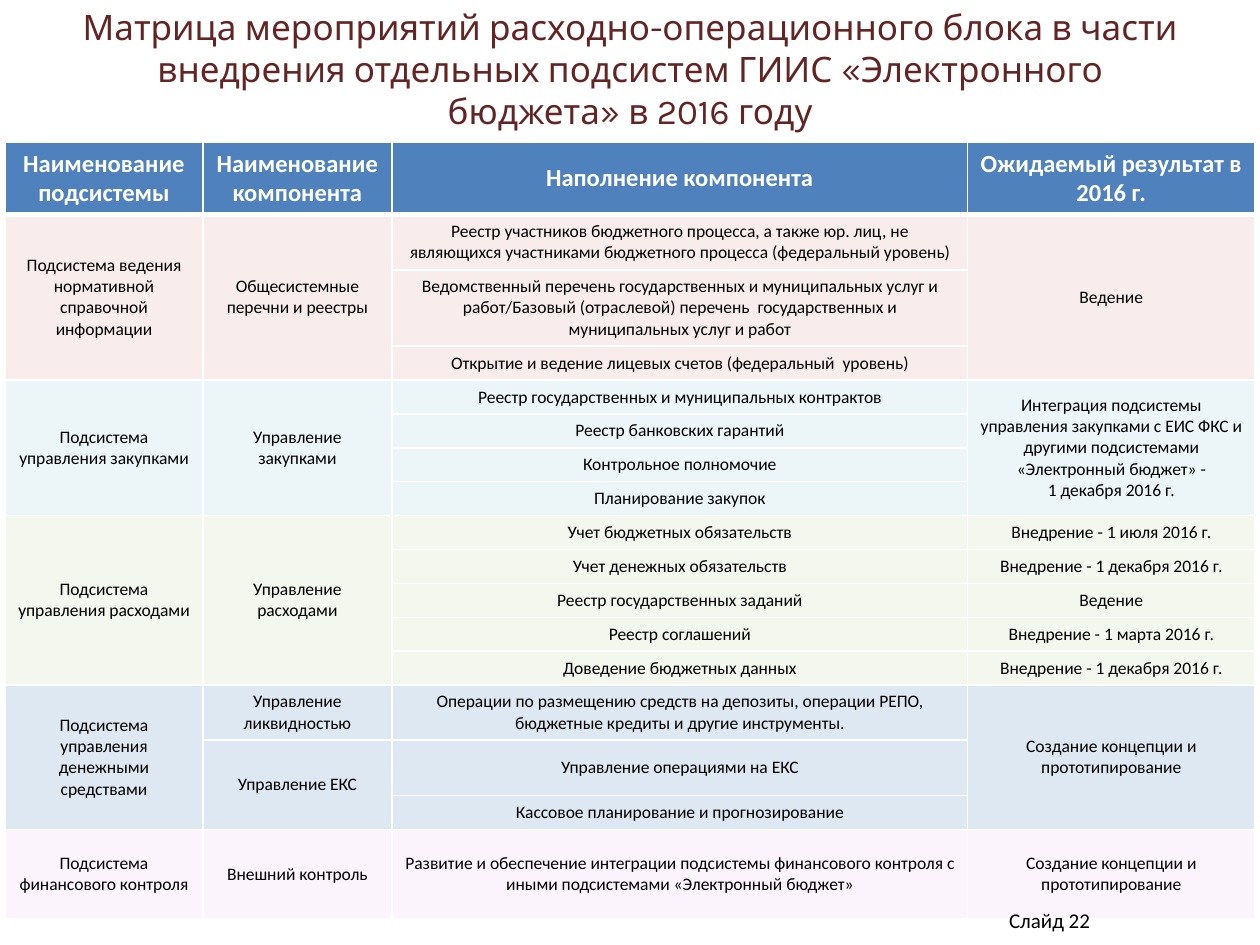
from dataclasses import dataclass

from lxml.etree import SubElement
from pptx import Presentation
from pptx.dml.color import RGBColor
from pptx.enum.text import MSO_ANCHOR as Anchor, PP_ALIGN as Align
from pptx.oxml.ns import qn
from pptx.util import Inches, Pt


@dataclass(frozen=True)
class Theme:
    """Fonts, type sizes and colours of the page."""
    title_font: str = "Karla"
    body_font: str = "Calibri"
    title_size: int = 20
    header_size: int = 14
    footer_size: int = 12
    body_size: int = 10
    title_color: str = "632523"
    header_fill: str = "4F81BD"
    white: str = "FFFFFF"
    black: str = "000000"
    rose: tuple = ("F2DCDB", 50)
    aqua: tuple = ("DBEEF4", 50)
    green: tuple = ("EBF1DE", 50)
    blue: tuple = ("95B3D7", 30)
    violet: tuple = ("FBEBFA", 50)


THEME = Theme()
TITLE = ("Матрица мероприятий расходно-операционного блока в части внедрения "
         "отдельных подсистем ГИИС «Электронного бюджета» в 2016 году")
HEADER = ("Наименование\nподсистемы", "Наименование компонента",
          "Наполнение компонента", "Ожидаемый результат в 2016 г.")
GROUPS = [
    (THEME.rose, [
        ("Подсистема ведения нормативной справочной информации",
         "Общесистемные перечни и реестры",
         "Реестр участников бюджетного процесса, а также юр. лиц, не являющихся "
         "участниками бюджетного процесса (федеральный уровень)", "Ведение"),
        (None, None,
         "Ведомственный перечень государственных и муниципальных услуг и "
         "работ/Базовый (отраслевой) перечень  государственных и муниципальных "
         "услуг и работ", None),
        (None, None, "Открытие и ведение лицевых счетов (федеральный  уровень)", None),
    ]),
    (THEME.aqua, [
        ("Подсистема управления закупками", "Управление закупками",
         "Реестр государственных и муниципальных контрактов",
         "Интеграция подсистемы управления закупками с ЕИС ФКС и другими "
         "подсистемами «Электронный бюджет» -\n1 декабря 2016 г."),
        (None, None, "Реестр банковских гарантий", None),
        (None, None, "Контрольное полномочие", None),
        (None, None, "Планирование закупок", None),
    ]),
    (THEME.green, [
        ("Подсистема управления расходами", "Управление расходами",
         "Учет бюджетных обязательств", "Внедрение - 1 июля 2016 г."),
        (None, None, "Учет денежных обязательств", "Внедрение - 1 декабря 2016 г."),
        (None, None, "Реестр государственных заданий", "Ведение"),
        (None, None, "Реестр соглашений", "Внедрение - 1 марта 2016 г."),
        (None, None, "Доведение бюджетных данных", "Внедрение - 1 декабря 2016 г."),
    ]),
    (THEME.blue, [
        ("Подсистема управления денежными средствами", "Управление ликвидностью",
         "Операции по размещению средств на депозиты, операции РЕПО, бюджетные "
         "кредиты и другие инструменты.", "Создание концепции и прототипирование"),
        (None, "Управление ЕКС", "Управление операциями на ЕКС", None),
        (None, None, "Кассовое планирование и прогнозирование", None),
    ]),
    (THEME.violet, [
        ("Подсистема финансового контроля", "Внешний контроль",
         "Развитие и обеспечение интеграции подсистемы финансового контроля с "
         "иными подсистемами «Электронный бюджет»",
         "Создание концепции и прототипирование"),
    ]),
]
COLUMN_WIDTHS = [1.57, 1.5, 4.57, 2.28]
ROW_HEIGHTS = [0.54, 0.42, 0.58, 0.27] + [0.26] * 9 + [0.42, 0.44, 0.26, 0.71]


class PageBuilder:
    """Draws styled elements on the current slide."""

    def __init__(self, deck, theme):
        self.theme = theme
        self.page = deck.slides.add_slide(deck.slide_layouts[5])

    def format_text(self, frame, size, color, font, align=Align.CENTER, bold=False):
        """Apply one look to all text of a frame."""
        for para in frame.paragraphs:
            para.alignment = align
            for span in para.runs:
                span.font.name = font
                span.font.size = Pt(size)
                span.font.bold = bold
                span.font.color.rgb = RGBColor.from_string(color)

    def title(self, text, left, top, width, height):
        """Place the title placeholder."""
        box = self.page.shapes.title
        box.left, box.top = Inches(left), Inches(top)
        box.width, box.height = Inches(width), Inches(height)
        box.text_frame.text = text
        box.text_frame.vertical_anchor = Anchor.MIDDLE
        self.format_text(box.text_frame, self.theme.title_size,
                         self.theme.title_color, self.theme.title_font)

    def footer(self, text, left, top, width, height):
        """Add the right-aligned page label."""
        box = self.page.shapes.add_textbox(
            Inches(left), Inches(top), Inches(width), Inches(height))
        frame = box.text_frame
        frame.word_wrap = True
        frame.vertical_anchor = Anchor.MIDDLE
        frame.text = text
        self.format_text(frame, self.theme.footer_size, self.theme.black,
                         self.theme.body_font, Align.RIGHT)

    def style_cell(self, cell, fill, opacity, bottom_width):
        """Give a cell its borders and its fill."""
        properties = cell._tc.get_or_add_tcPr()
        for side, width in (("L", 1), ("R", 1), ("T", 1), ("B", bottom_width)):
            line = SubElement(properties, qn(f"a:ln{side}"), w=str(Pt(width)))
            solid = SubElement(line, qn("a:solidFill"))
            SubElement(solid, qn("a:srgbClr"), val=self.theme.white)
        cell.fill.solid()
        cell.fill.fore_color.rgb = RGBColor.from_string(fill)
        if opacity < 100:
            color = properties.find(qn("a:solidFill")).find(qn("a:srgbClr"))
            SubElement(color, qn("a:alpha"), val=str(opacity * 1000))

    def matrix(self, header, groups, widths, heights, left, top):
        """Add the table, merging each cell with the empty ones below it."""
        theme = self.theme
        rows = [(theme.header_fill, 100, header)]
        rows += [(*tint, row) for tint, group in groups for row in group]
        table = self.page.shapes.add_table(
            len(rows), len(widths), Inches(left), Inches(top),
            Inches(sum(widths)), Inches(sum(heights))).table
        for column, width in zip(table.columns, widths):
            column.width = Inches(width)
        for line, height in zip(table.rows, heights):
            line.height = Inches(height)
        for index, (fill, opacity, texts) in enumerate(rows):
            is_header = index == 0
            size = theme.header_size if is_header else theme.body_size
            color = theme.white if is_header else theme.black
            for position, text in enumerate(texts):
                cell = table.cell(index, position)
                self.style_cell(cell, fill, opacity, 3 if is_header else 1)
                cell.vertical_anchor = Anchor.MIDDLE
                cell.text_frame.text = text or ""
                self.format_text(cell.text_frame, size, color, theme.body_font,
                                 bold=is_header)
                if text is None:
                    cell.text_frame.paragraphs[0].font.size = Pt(size)
        for position in range(len(widths)):
            starts = [i for i, row in enumerate(rows) if row[2][position] is not None]
            for start, stop in zip(starts, starts[1:] + [len(rows)]):
                if stop - start > 1:
                    table.cell(start, position).merge(table.cell(stop - 1, position))


def main():
    """Build and save the deck."""
    deck = Presentation()
    deck.slide_width, deck.slide_height = Inches(10), Inches(7.5)
    builder = PageBuilder(deck, THEME)
    builder.title(TITLE, 0.5, 0.02, 9, 1.05)
    builder.matrix(HEADER, GROUPS, COLUMN_WIDTHS, ROW_HEIGHTS, 0.04, 1.13)
    builder.footer("Слайд 22", 6.42, 7.1, 2.33, 0.4)
    deck.save("out.pptx")


if __name__ == "__main__":
    main()
